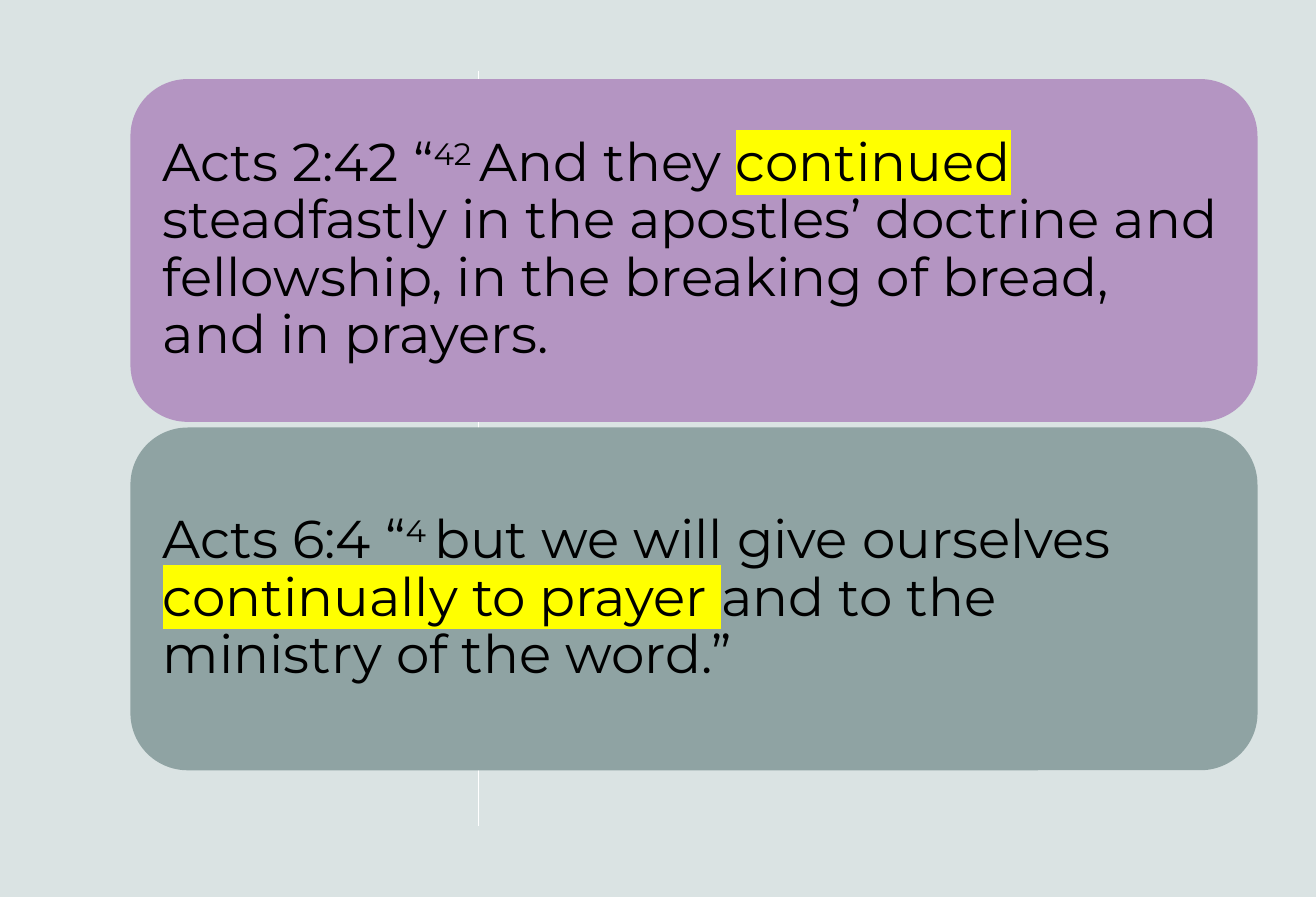
from lxml.etree import SubElement
from pptx import Presentation
from pptx.dml.color import RGBColor
from pptx.enum.shapes import MSO_CONNECTOR as CONN, MSO_SHAPE as SHAPE
from pptx.enum.text import MSO_ANCHOR as ANCHOR, PP_ALIGN as ALIGN
from pptx.oxml.ns import qn
from pptx.util import Cm, Pt


def rgb(value):
    return RGBColor.from_string(value)


def add_run(p, text, font="Montserrat", size=32, color="000000", raised=False, highlight=None):
    r = p.add_run()
    r.text = text
    r.font.size = Pt(size)
    r.font.color.rgb = rgb(color)
    rPr = r.font._element
    if raised:
        rPr.set("baseline", "30000")
    if highlight:
        mark = SubElement(rPr, qn("a:highlight"))
        SubElement(mark, qn("a:srgbClr")).set("val", highlight)
    r.font.name = font


class Deck:
    inset = Cm(0.33)
    spacing = 0.9

    def __init__(self, prs, background):
        self.s = prs.slides.add_slide(prs.slide_layouts[6])
        self.s.background.fill.solid()
        self.s.background.fill.fore_color.rgb = rgb(background)

    def line(self, x1, y1, x2, y2, color, width=1):
        cn = self.s.shapes.add_connector(CONN.STRAIGHT, Cm(x1), Cm(y1), Cm(x2), Cm(y2))
        cn.line.color.rgb = rgb(color)
        cn.line.width = Pt(width)
        SubElement(cn._element.spPr, qn("a:effectLst"))

    def card(self, x, y, w, h, fill, runs):
        sp = self.s.shapes.add_shape(SHAPE.ROUNDED_RECTANGLE, Cm(x), Cm(y), Cm(w), Cm(h))
        sp.shadow.inherit = False
        sp.fill.solid()
        sp.fill.fore_color.rgb = rgb(fill)
        sp.line.fill.background()
        tf = sp.text_frame
        tf.word_wrap = True
        tf.vertical_anchor = ANCHOR.MIDDLE
        tf.margin_left = tf.margin_right = tf.margin_top = tf.margin_bottom = self.inset
        p = tf.paragraphs[0]
        p.alignment = ALIGN.LEFT
        p.line_spacing = self.spacing
        for text, style in runs:
            add_run(p, text, **style)


PLAIN = {}
VERSE = {"raised": True}
MARKED = {"highlight": "FFFF00"}

CARDS = [
    ("B495C2", [
        ("Acts 2:42 “", PLAIN),
        ("42 ", VERSE),
        ("And they ", PLAIN),
        ("continued", MARKED),
        (" steadfastly in the apostles’ doctrine and fellowship, "
         "in the breaking of bread, and in prayers.", PLAIN),
    ]),
    ("8FA3A3", [
        ("Acts 6:4 “", PLAIN),
        ("4 ", VERSE),
        ("but we will give ourselves ", PLAIN),
        ("continually to prayer ", MARKED),
        ("and to the ministry of the word.”", PLAIN),
    ]),
]


def main():
    prs = Presentation()
    prs.slide_width, prs.slide_height = Cm(27.94), Cm(19.05)
    deck = Deck(prs, "DAE3E3")
    deck.line(10.16, 1.5, 10.16, 17.55, "FFFFFF")
    height, gap = 7.28, 0.12
    for i, (fill, runs) in enumerate(CARDS):
        deck.card(2.77, 1.68 + i * (height + gap), 23.93, height, fill, runs)
    prs.save("out.pptx")


if __name__ == "__main__":
    main()
